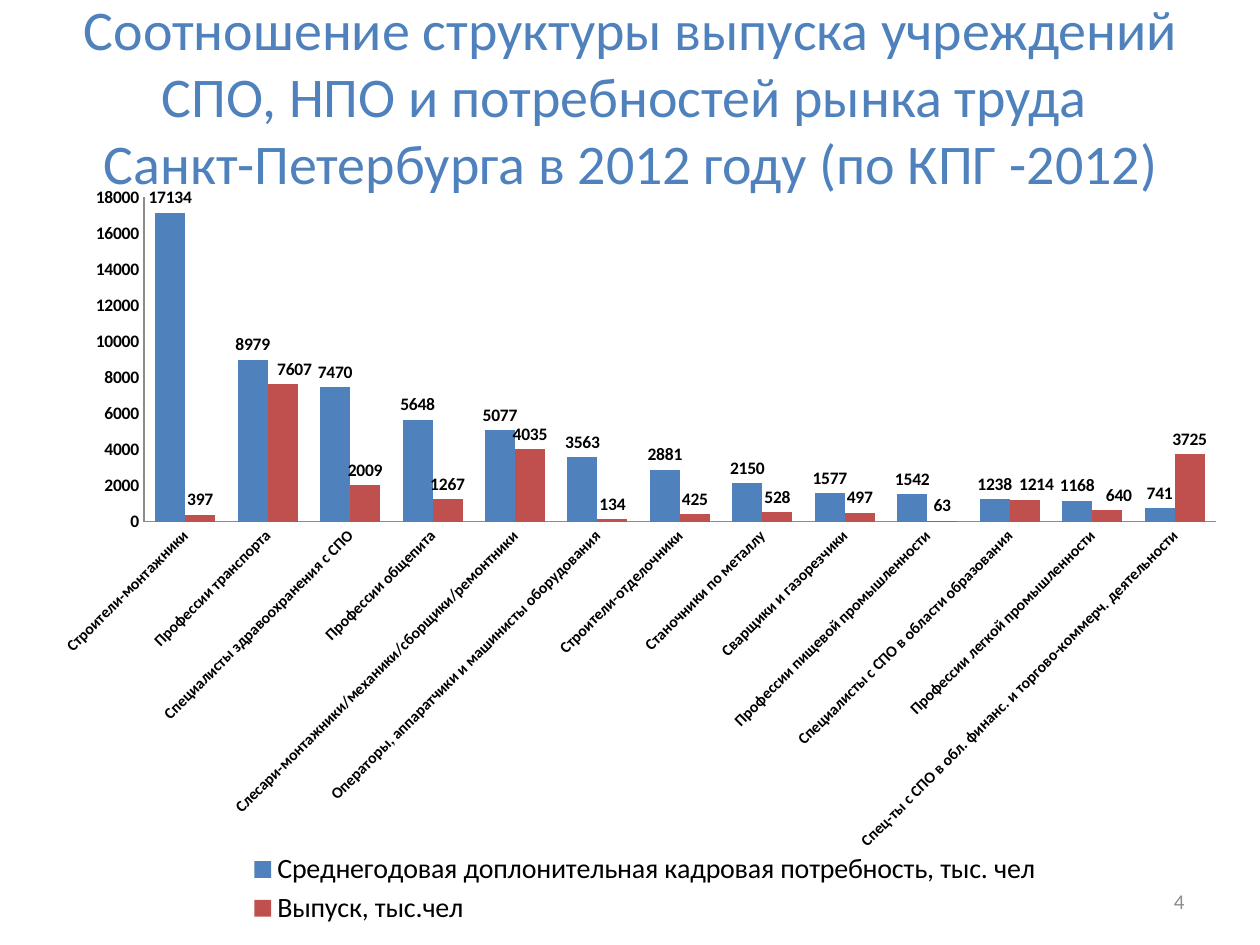
"""Build a slide comparing workforce demand with college graduates by occupation."""
from lxml import etree
from pptx import Presentation
from pptx.chart.data import CategoryChartData
from pptx.dml.color import RGBColor
from pptx.enum.chart import XL_CHART_TYPE, XL_LABEL_POSITION, XL_LEGEND_POSITION, XL_TICK_MARK
from pptx.enum.text import MSO_ANCHOR, PP_ALIGN
from pptx.oxml.ns import qn
from pptx.util import Inches, Pt

BLUE = RGBColor(0x4F, 0x81, 0xBD)
RED = RGBColor(0xC0, 0x50, 0x4D)
BLACK = RGBColor(0, 0, 0)
GRAY = RGBColor(0x8C, 0x8C, 0x8C)
FONT = "Calibri"

DEMAND = "Среднегодовая доплонительная кадровая потребность, тыс. чел"
GRADUATES = "Выпуск, тыс.чел"
OCCUPATIONS = [
    ("Строители-монтажники", 17134, 397),
    ("Профессии транспорта", 8979, 7607),
    ("Специалисты здравоохранения с СПО", 7470, 2009),
    ("Профессии общепита", 5648, 1267),
    ("Слесари-монтажники/механики/сборщики/ремонтники", 5077, 4035),
    ("Операторы, аппаратчики и машинисты оборудования", 3563, 134),
    ("Строители-отделочники", 2881, 425),
    ("Станочники по металлу", 2150, 528),
    ("Сварщики и газорезчики", 1577, 497),
    ("Профессии пищевой промышленности", 1542, 63),
    ("Специалисты с СПО в области образования", 1238, 1214),
    ("Профессии легкой промышленности", 1168, 640),
    ("Спец-ты с СПО в обл. финанс. и торгово-коммерч. деятельности", 741, 3725),
]
LABEL_SHIFTS = {1: 0.01, 10: 0.01, 11: 0.01}


def add_text(text, left, top, width, height, size, color, align):
    box = slide.shapes.add_textbox(Inches(left), Inches(top), Inches(width), Inches(height))
    frame = box.text_frame
    frame.word_wrap = True
    frame.vertical_anchor = MSO_ANCHOR.MIDDLE
    paragraph = frame.paragraphs[0]
    paragraph.text = text
    paragraph.alignment = align
    for run in paragraph.runs:
        run.font.name = FONT
        run.font.size = Pt(size)
        run.font.color.rgb = color


def set_layout(parent, index, **settings):
    for old in parent.findall(qn("c:layout")):
        parent.remove(old)
    layout = etree.Element(qn("c:layout"))
    manual = etree.SubElement(layout, qn("c:manualLayout"))
    for tag, value in settings.items():
        etree.SubElement(manual, qn(f"c:{tag}")).set("val", str(value))
    parent.insert(index, layout)


presentation = Presentation()
presentation.slide_width = Inches(10)
presentation.slide_height = Inches(7.5)
slide = presentation.slides.add_slide(presentation.slide_layouts[6])

add_text("Соотношение структуры выпуска учреждений СПО, НПО и потребностей рынка труда \v"
         "Санкт-Петербурга в 2012 году (по КПГ -2012)",
         left=0.51, top=0.13, width=9, height=1.25, size=32, color=BLUE, align=PP_ALIGN.CENTER)

names, demand, graduates = zip(*OCCUPATIONS)
figures = CategoryChartData()
figures.categories = names
figures.add_series(DEMAND, demand)
figures.add_series(GRADUATES, graduates)
chart = slide.shapes.add_chart(XL_CHART_TYPE.COLUMN_CLUSTERED, Inches(0.43), Inches(1.47),
                               Inches(9.38), Inches(5.91), figures).chart
chart.has_title = False
chart.font.name = FONT
chart.font.size = Pt(18)
chart.font.color.rgb = BLACK

for axis, size in ((chart.category_axis, 9), (chart.value_axis, 10)):
    axis.has_major_gridlines = False
    axis.major_tick_mark = XL_TICK_MARK.NONE
    axis.minor_tick_mark = XL_TICK_MARK.NONE
    axis.tick_labels.font.size = Pt(size)
    axis.tick_labels.font.bold = True
    axis.format.line.color.rgb = GRAY
chart.value_axis.minimum_scale = 0
chart.value_axis.maximum_scale = 18000
chart.value_axis.major_unit = 2000
chart.category_axis._element.find(f"{qn('c:txPr')}/{qn('a:bodyPr')}").set("rot", "-2700000")

columns = chart.plots[0]
columns.gap_width = 75
columns.overlap = 0
columns.vary_by_categories = False
for series, color in zip(columns.series, (BLUE, RED)):
    series.format.fill.solid()
    series.format.fill.fore_color.rgb = color
    series.invert_if_negative = False
    labels = series.data_labels
    labels.show_value = True
    labels.position = XL_LABEL_POSITION.OUTSIDE_END
    labels.font.size = Pt(10)
    labels.font.bold = True

for index, shift in LABEL_SHIFTS.items():
    label = columns.series[1].points[index].data_label
    label.font.size = Pt(10)
    label.font.bold = True
    label.position = XL_LABEL_POSITION.OUTSIDE_END
for element in columns.series[1]._element.iter(qn("c:dLbl")):
    index = int(element.find(qn("c:idx")).get("val"))
    set_layout(element, 1, x=LABEL_SHIFTS[index], y=0)

chart.has_legend = True
chart.legend.position = XL_LEGEND_POSITION.BOTTOM
chart.legend.include_in_layout = False
chart.legend.font.size = Pt(16)
set_layout(chart.legend._element, 1, xMode="edge", yMode="edge", x=0.16, y=0.89, w=0.68, h=0.11)
set_layout(columns._element.getparent(), 0, layoutTarget="inner", xMode="edge", yMode="edge",
           x=0.076, y=0.016, w=0.907, h=0.436)

add_text("4", left=7.17, top=6.95, width=2.33, height=0.4, size=12, color=GRAY, align=PP_ALIGN.RIGHT)

presentation.save("out.pptx")
